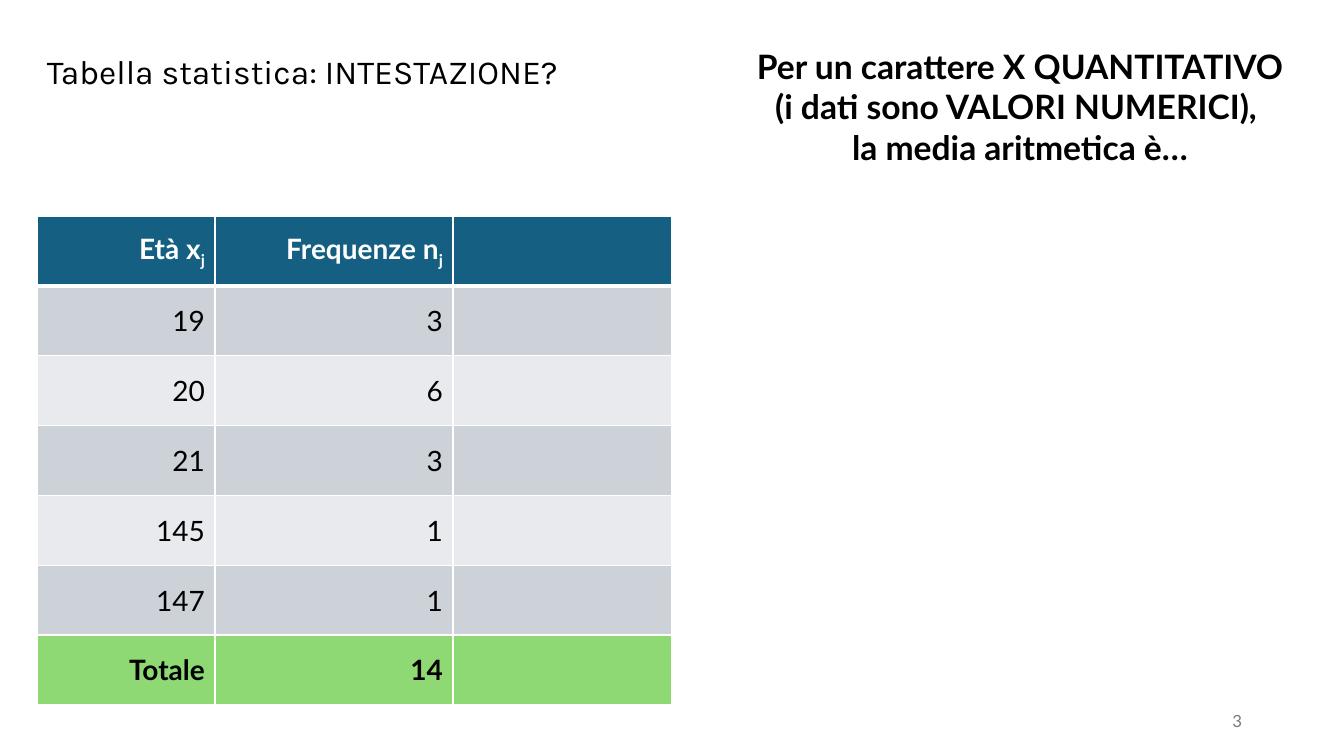
from dataclasses import dataclass

import pptx
import pptx.dml.color
import pptx.enum.text
import pptx.oxml
import pptx.oxml.ns
import pptx.util

RGBColor = pptx.dml.color.RGBColor
Align = pptx.enum.text.PP_ALIGN
Anchor = pptx.enum.text.MSO_ANCHOR

BLACK = RGBColor(0x00, 0x00, 0x00)
WHITE = RGBColor(0xFF, 0xFF, 0xFF)
GREY = RGBColor(0x79, 0x79, 0x79)
BLUE = RGBColor(0x15, 0x60, 0x82)
BAND_DARK = RGBColor(0xCC, 0xD2, 0xD8)
BAND_LIGHT = RGBColor(0xE8, 0xEA, 0xED)
GREEN = RGBColor(0x8E, 0xD9, 0x73)

EMU_PER_PX = 914400 / 100.8
COLUMN_WIDTHS = (178, 238, 219)


@dataclass
class Row:
    cells: tuple[str, str]
    fill: RGBColor
    color: RGBColor = BLACK
    bold: bool = False
    bottom_pt: int = 1


AGES = (("19", "3"), ("20", "6"), ("21", "3"), ("145", "1"), ("147", "1"))
ROWS = [
    Row(("Età x_j", "Frequenze n_j"), BLUE, WHITE, True, 3),
    *(Row(cells, (BAND_DARK, BAND_LIGHT)[i % 2]) for i, cells in enumerate(AGES)),
    Row(("Totale", "14"), GREEN, bold=True),
]


def px(n: int) -> int:
    return round(n * EMU_PER_PX)


def write(tf, text: str, *, size: int, font: str = "Lato", color: RGBColor = BLACK,
          bold: bool = False, align=Align.LEFT, spacing: float = 1.0) -> None:
    """Write one paragraph per line; what follows "_" in a line is subscript."""
    for i, line in enumerate(text.split("\n")):
        p = tf.add_paragraph() if i else tf.paragraphs[0]
        p.alignment = align
        p.line_spacing = spacing
        base, _, subscript = line.partition("_")
        for part in filter(None, (base, subscript)):
            r = p.add_run()
            r.text = part
            r.font.size = pptx.util.Pt(size)
            r.font.name = font
            r.font.bold = bold
            r.font.color.rgb = color
        if subscript:
            r._r.get_or_add_rPr().set("baseline", "-25000")


def add_text(slide, box: tuple[int, int, int, int], text: str, *,
             anchor=Anchor.MIDDLE, bottom: int = 5, **style) -> None:
    sp = slide.shapes.add_textbox(*map(px, box))
    tf = sp.text_frame
    tf.word_wrap = True
    tf.vertical_anchor = anchor
    tf.margin_bottom = px(bottom)
    write(tf, text, **style)


def set_borders(cell, bottom_pt: int) -> None:
    tcPr = cell._tc.get_or_add_tcPr()
    for i, side in enumerate("LRTB"):
        width = pptx.util.Pt(bottom_pt if side == "B" else 1)
        tcPr.insert(i, pptx.oxml.parse_xml(
            f'<a:ln{side} {pptx.oxml.ns.nsdecls("a")} w="{width}"><a:solidFill>'
            f'<a:srgbClr val="{WHITE}"/></a:solidFill></a:ln{side}>'))


def add_frequency_table(slide) -> None:
    table = slide.shapes.add_table(len(ROWS), len(COLUMN_WIDTHS), px(37), px(216),
                                   px(sum(COLUMN_WIDTHS)), px(489)).table
    table.horz_banding = False
    for column, width in zip(table.columns, COLUMN_WIDTHS):
        column.width = px(width)
    for i, row in enumerate(ROWS):
        for j in range(len(COLUMN_WIDTHS)):
            cell = table.cell(i, j)
            cell.fill.solid()
            cell.fill.fore_color.rgb = row.fill
            cell.vertical_anchor = Anchor.MIDDLE
            set_borders(cell, row.bottom_pt)
            if j < len(row.cells):
                write(cell.text_frame, row.cells[j], size=20, color=row.color,
                      bold=row.bold, align=Align.RIGHT)


def main() -> None:
    prs = pptx.Presentation()
    prs.slide_width, prs.slide_height = px(1344), px(756)
    slide = prs.slides.add_slide(prs.slide_layouts[6])

    add_text(slide, (37, 27, 1086, 132), "Tabella statistica: INTESTAZIONE?",
             bottom=43, size=24, font="Karla", spacing=0.9)
    add_frequency_table(slide)
    add_text(slide, (950, 701, 302, 40), "3", size=12, color=GREY, align=Align.RIGHT)
    add_text(slide, (746, 41, 548, 214),
             "Per un carattere X QUANTITATIVO\n(i dati sono VALORI NUMERICI), \n"
             "la media aritmetica è…",
             anchor=Anchor.TOP, size=24, bold=True, align=Align.CENTER)
    prs.save("out.pptx")


if __name__ == "__main__":
    main()
